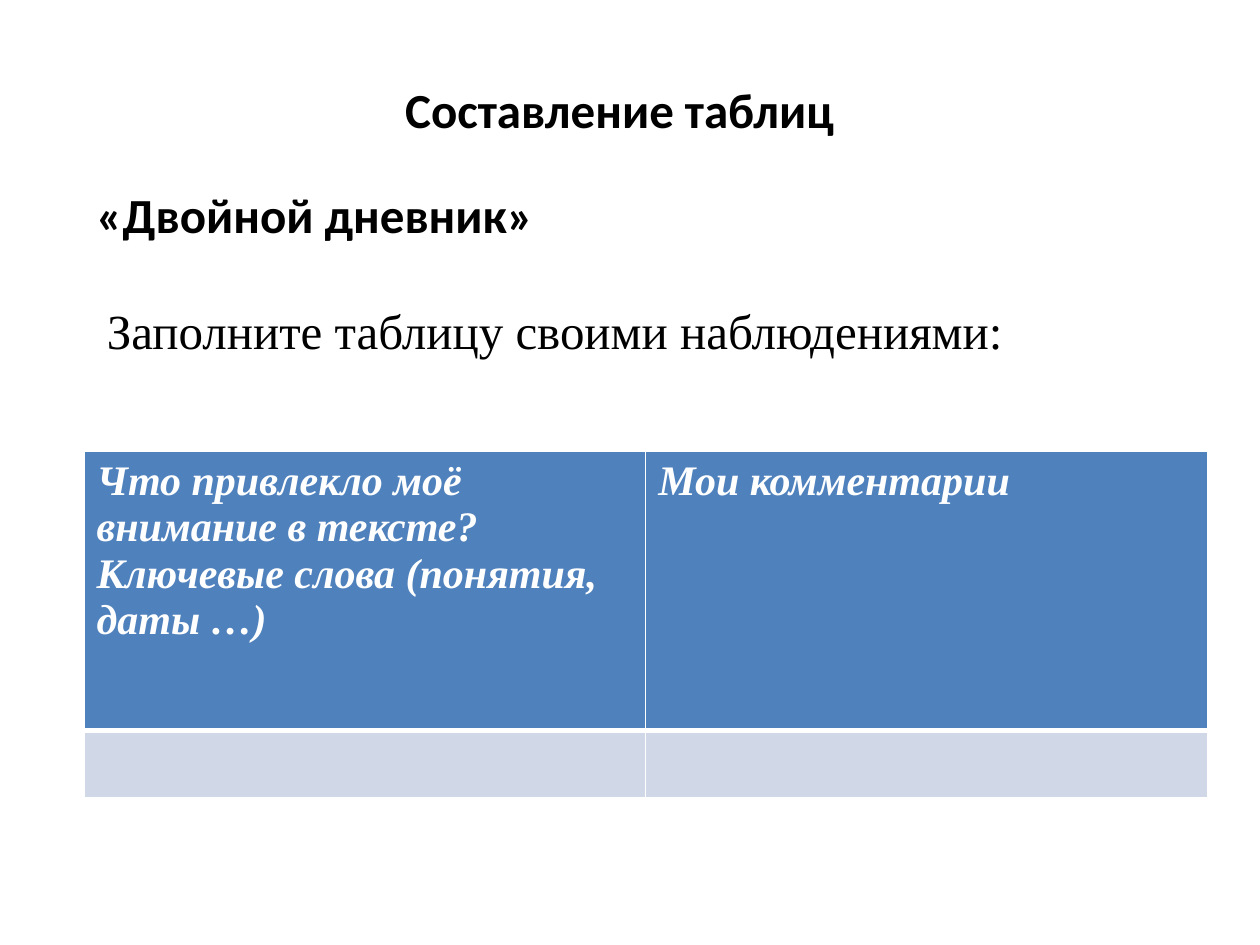
from lxml.etree import SubElement
from pptx import Presentation
from pptx.dml.color import RGBColor
from pptx.enum.text import MSO_ANCHOR as Anchor, MSO_AUTO_SIZE as AutoSize, PP_ALIGN as Align
from pptx.oxml.ns import qn
from pptx.util import Emu, Pt

PX = 7620  # 120 px to the inch
BLACK, WHITE = "000000", "FFFFFF"
HEADER_FILL, BODY_FILL = "4F81BD", "D0D8E8"

HEADING = {"name": "Calibri", "size": Pt(28), "bold": True}
PROMPT = {"name": "Times New Roman", "size": Pt(28), "bold": False}
COLUMN_HEAD = {"name": "Times New Roman", "size": Pt(24), "bold": True, "italic": True}


def px(*lengths):
    return [Emu(length * PX) for length in lengths]


def rgb(code):
    return RGBColor.from_string(code)


def set_all(target, values):
    for name, value in values.items():
        setattr(target, name, value)


def write(frame, text, font, color, align=Align.LEFT):
    para = frame.paragraphs[0]
    para.alignment = align
    span = para.add_run()
    span.text = text
    set_all(span.font, font)
    span.font.color.rgb = rgb(color)


def format_box(box, place, text, font, align=Align.LEFT):
    set_all(box, dict(zip(("left", "top", "width", "height"), px(*place))))
    set_all(box.text_frame, {
        "word_wrap": True,
        "auto_size": AutoSize.SHAPE_TO_FIT_TEXT,
        "vertical_anchor": Anchor.TOP,
    })
    write(box.text_frame, text, font, BLACK, align)


def add_text(page, place, text, font):
    format_box(page.shapes.add_textbox(*px(*place)), place, text, font)


def set_borders(cell, widths):
    properties = cell._tc.get_or_add_tcPr()
    for side, width in widths.items():
        line = SubElement(properties, qn(f"a:ln{side}"), w=str(Pt(width)))
        fill = SubElement(line, qn("a:solidFill"))
        SubElement(fill, qn("a:srgbClr"), val=WHITE)


def add_diary_table(page, place, row_heights, headers):
    table = page.shapes.add_table(len(row_heights), len(headers), *px(*place)).table
    for row, height in zip(table.rows, px(*row_heights)):
        row.height = height
    for cell, header in zip(table.rows[0].cells, headers):
        write(cell.text_frame, header, COLUMN_HEAD, WHITE)

    # The thick rule lies between the header and the empty row
    row_styles = [
        (HEADER_FILL, {"L": 1, "R": 1, "T": 1, "B": 3}),
        (BODY_FILL, {"L": 1, "R": 1, "T": 3, "B": 1}),
    ]
    for row, (color, widths) in zip(table.rows, row_styles):
        for cell in row.cells:
            set_borders(cell, widths)
            cell.fill.solid()
            cell.fill.fore_color.rgb = rgb(color)


def main():
    deck = Presentation()
    deck.slide_width, deck.slide_height = px(1200, 900)
    page = deck.slides.add_slide(deck.slide_layouts[5])

    # Headings and task
    format_box(page.shapes.title, (80, 70, 1020, 68), "Составление таблиц",
               HEADING, Align.CENTER)
    add_text(page, (80, 170, 1020, 68), "«Двойной дневник»", HEADING)
    add_text(page, (90, 280, 1000, 68), "Заполните таблицу своими наблюдениями:", PROMPT)

    # Double diary
    add_diary_table(page, (80, 430, 1070, 330), (266, 64), (
        "Что привлекло моё внимание в тексте? Ключевые слова (понятия, даты …)",
        "Мои комментарии",
    ))

    deck.save("out.pptx")


if __name__ == "__main__":
    main()
